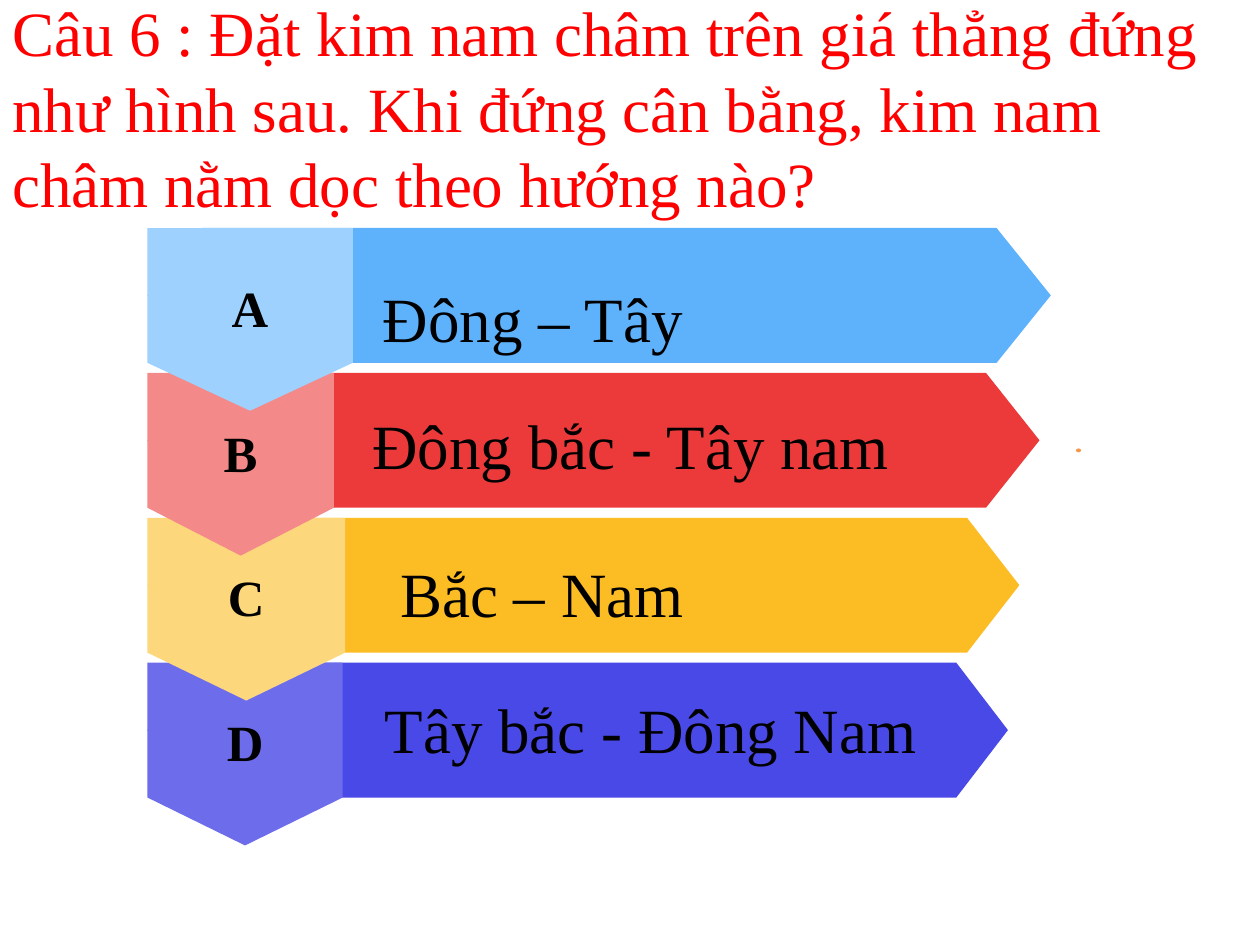
from pptx import Presentation
from pptx.dml.color import RGBColor
from pptx.enum import shapes, text
from pptx.util import Inches, Pt

FONT = "Times New Roman"
COLORS = {
    "question": "FF0000", "ink": "000000", "dot": "F79646",
    "A bar": "5EB2FC", "A badge": "9ED1FD",
    "B bar": "EC3A3B", "B badge": "F48989",
    "C bar": "FCBD24", "C badge": "FDD77C",
    "D bar": "4949E7", "D badge": "6D6DEC",
}
QUESTION = ("Câu 6 :\u00a0Đặt kim nam châm trên giá thẳng đứng như hình sau. "
            "Khi đứng cân bằng, kim nam châm nằm dọc theo hướng nào?")
LEFT, CENTER = text.PP_ALIGN.LEFT, text.PP_ALIGN.CENTER
# letter, answer, bar width, badge width, answer box, alignment, line spacing
ANSWERS = [
    ("A", "Đông – Tây", 7.17, 1.63, (2.94, 2.08, 4.19, 0.58), LEFT, 1.5),
    ("B", "Đông bắc - Tây nam", 7.08, 1.48, (2.67, 3.33, 4.67, 0.4), CENTER, None),
    ("C", "Bắc – Nam", 6.92, 1.57, (3.08, 4.5, 3.83, 0.4), LEFT, None),
    ("D", "Tây bắc - Đông Nam", 6.83, 1.55, (2.75, 5.58, 4.83, 0.4), CENTER, None),
]
START_X, START_Y, PITCH = 1.17, 1.81, 1.15
BAR_HEIGHT, BADGE_HEIGHT = 1.07, 1.45
POINT_RATIO = 0.06

prs = Presentation()
prs.slide_width, prs.slide_height = Inches(10), Inches(7.5)
slide = prs.slides.add_slide(prs.slide_layouts[6])


def paint(shape, color):
    shape.shadow.inherit = False
    shape.fill.solid()
    shape.fill.fore_color.rgb = RGBColor.from_string(COLORS[color])
    shape.line.fill.background()


def polygon(points, color):
    corners = [(Inches(x), Inches(y)) for x, y in points]
    builder = slide.shapes.build_freeform(*corners[0])
    builder.add_line_segments(corners[1:], close=True)
    outline = builder.convert_to_shape()
    paint(outline, color)
    return outline


def write(shape, words, size, color="ink", align=LEFT, bold=False,
          bottom=0.1, spacing=None):
    frame = shape.text_frame
    frame.word_wrap = True
    frame.vertical_anchor = text.MSO_ANCHOR.MIDDLE
    frame.margin_left = frame.margin_right = frame.margin_top = Inches(0.1)
    frame.margin_bottom = Inches(bottom)
    paragraph = frame.paragraphs[0]
    paragraph.alignment = align
    if spacing:
        paragraph.line_spacing = spacing
    run = paragraph.add_run()
    run.text = words
    run.font.name, run.font.size, run.font.bold = FONT, Pt(size), bold
    run.font.color.rgb = RGBColor.from_string(COLORS[color])


def text_box(box, words, **style):
    write(slide.shapes.add_textbox(*map(Inches, box)), words, 36, **style)


def add_answer(row, letter, answer, bar_width, badge_width, box, align, spacing):
    top = START_Y + row * PITCH
    bottom, middle = top + BAR_HEIGHT, top + BAR_HEIGHT / 2
    right, point = START_X + bar_width, bar_width * POINT_RATIO
    polygon([(START_X + point, top), (START_X, middle), (START_X + point, bottom),
             (right - point, bottom), (right, middle), (right - point, top)],
            f"{letter} bar")
    badge_right = START_X + badge_width
    badge = polygon([(START_X, top), (START_X, bottom),
                     (START_X + badge_width / 2, top + BADGE_HEIGHT),
                     (badge_right, bottom), (badge_right, top)],
                    f"{letter} badge")
    write(badge, letter, 29, align=CENTER, bold=True, bottom=0.3)
    text_box(box, answer, align=align, spacing=spacing)


# Each badge overlaps the row below it, so the rows are stacked from the bottom up.
for row, answer in reversed(list(enumerate(ANSWERS))):
    add_answer(row, *answer)

dot = slide.shapes.add_shape(shapes.MSO_SHAPE.OVAL, *map(Inches, (8.54, 3.56, 0.04, 0.03)))
paint(dot, "dot")
text_box((0, 0.5, 10, 0.7), QUESTION, color="question")

prs.save("out.pptx")
